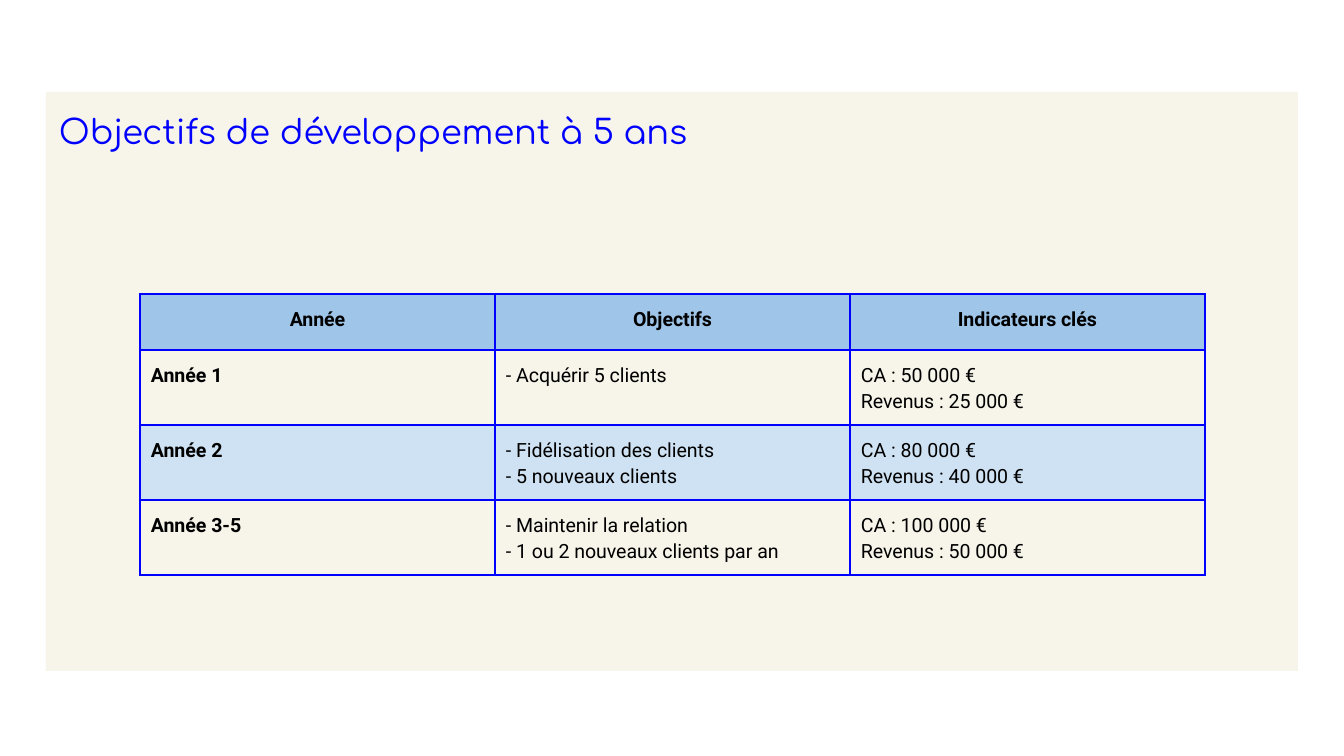
"""Build the five-year development goals slide."""
from dataclasses import dataclass

from lxml import etree
from pptx import Presentation
from pptx.dml.color import RGBColor
from pptx.enum.shapes import MSO_SHAPE
from pptx.enum.text import MSO_ANCHOR, PP_ALIGN
from pptx.oxml.ns import qn
from pptx.util import Pt

RECT = MSO_SHAPE.RECTANGLE
TOP = MSO_ANCHOR.TOP
CENTER, JUSTIFY = PP_ALIGN.CENTER, PP_ALIGN.JUSTIFY
EMU_PER_PX = 914400 / 134.4
SIDES = ("left", "right", "top", "bottom")


@dataclass(frozen=True)
class Theme:
    """Colours, fonts and type sizes."""
    blue: str = "0000FF"
    black: str = "000000"
    panel: str = "F7F4E9"
    header: str = "9FC5E8"
    band: str = "CFE2F3"
    title_font: str = "Comfortaa"
    table_font: str = "Roboto"
    title_size: float = 18
    table_size: float = 10.5
    border: float = 1
    spacing: float = 1.15


THEME = Theme()
TITLE = "Objectifs de développement à 5 ans"
ROWS = [
    ("Année", "Objectifs", "Indicateurs clés"),
    ("Année 1", "- Acquérir 5 clients", "CA : 50 000 €\nRevenus : 25 000 €"),
    ("Année 2", "- Fidélisation des clients\n- 5 nouveaux clients",
     "CA : 80 000 €\nRevenus : 40 000 €"),
    ("Année 3-5", "- Maintenir la relation\n- 1 ou 2 nouveaux clients par an",
     "CA : 100 000 €\nRevenus : 50 000 €"),
]
FILLS = (THEME.header, None, THEME.band, None)
ROW_HEIGHTS = (56, 75, 75, 75)
COL_WIDTH = 355


def px(value):
    """Convert pixels to EMU."""
    return round(value * EMU_PER_PX)


def set_attrs(target, values):
    """Set each attribute of the target from a dict."""
    for name, value in values.items():
        setattr(target, name, value)


def write_text(tf, text, align, color, **font):
    """Write one paragraph per line of text."""
    tf.word_wrap = True
    for i, line in enumerate(text.split("\n")):
        p = tf.add_paragraph() if i else tf.paragraphs[0]
        set_attrs(p, {"alignment": align, "line_spacing": THEME.spacing})
        r = p.add_run()
        r.text = line
        set_attrs(r.font, font)
        r.font.color.rgb = RGBColor.from_string(color)


def add_panel(s, box, text):
    """Add the tinted panel that carries the title."""
    sp = s.shapes.add_shape(RECT, *map(px, box))
    sp.shadow.inherit = False
    sp.fill.solid()
    sp.fill.fore_color.rgb = RGBColor.from_string(THEME.panel)
    sp.line.fill.background()
    tf = sp.text_frame
    set_attrs(tf, {f"margin_{side}": px(13) for side in SIDES})
    tf.vertical_anchor = TOP
    write_text(tf, text, JUSTIFY, THEME.blue, name=THEME.title_font,
               size=Pt(THEME.title_size), bold=False)


def add_borders(cell):
    """Draw a solid line on all four sides of a cell."""
    tc_pr = cell._tc.get_or_add_tcPr()
    for tag in ("a:lnL", "a:lnR", "a:lnT", "a:lnB"):
        ln = etree.SubElement(tc_pr, qn(tag), w=str(Pt(THEME.border)))
        fill = etree.SubElement(ln, qn("a:solidFill"))
        etree.SubElement(fill, qn("a:srgbClr"), val=THEME.blue)


def fill_cell(cell, text, color, align, bold):
    """Format one table cell and write its text."""
    set_attrs(cell, {f"margin_{side}": px(11) for side in SIDES})
    cell.vertical_anchor = TOP
    add_borders(cell)
    if color:
        cell.fill.solid()
        cell.fill.fore_color.rgb = RGBColor.from_string(color)
    else:
        cell.fill.background()
    write_text(cell.text_frame, text, align, THEME.black, name=THEME.table_font,
               size=Pt(THEME.table_size), bold=bold)


def add_goals_table(s, left, top):
    """Add the table of yearly goals and indicators."""
    cols = len(ROWS[0])
    table = s.shapes.add_table(len(ROWS), cols, px(left), px(top),
                               px(cols * COL_WIDTH), px(sum(ROW_HEIGHTS))).table
    for column in table.columns:
        column.width = px(COL_WIDTH)
    for i, (texts, color, height) in enumerate(zip(ROWS, FILLS, ROW_HEIGHTS)):
        table.rows[i].height = px(height)
        for j, text in enumerate(texts):
            fill_cell(table.cell(i, j), text, color,
                      JUSTIFY if i else CENTER, i == 0 or j == 0)


def main():
    """Build and save the slide."""
    prs = Presentation()
    set_attrs(prs, {"slide_width": px(1344), "slide_height": px(756)})
    s = prs.slides.add_slide(prs.slide_layouts[6])
    add_panel(s, (46, 92, 1252, 579), TITLE)
    add_goals_table(s, 140, 294)
    prs.save("out.pptx")


if __name__ == "__main__":
    main()
